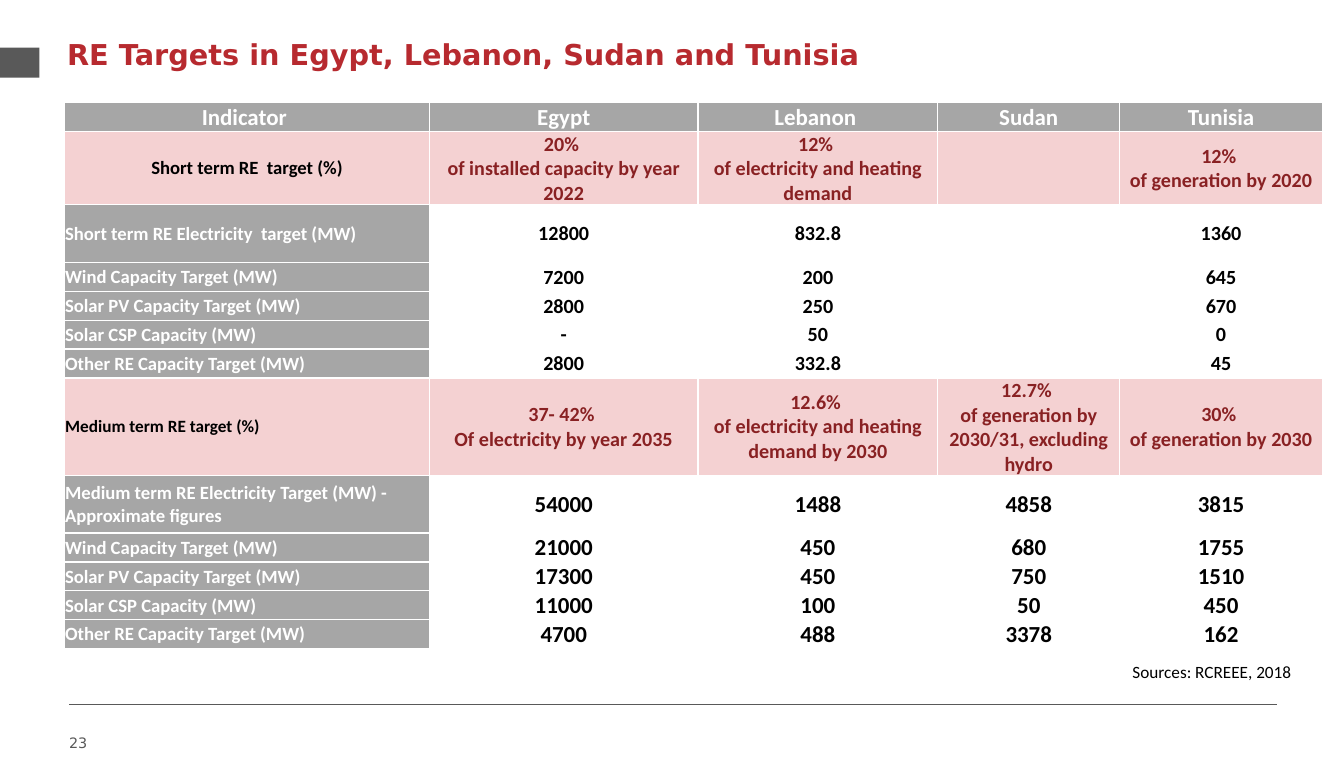
from dataclasses import dataclass

from lxml.etree import SubElement
from pptx import Presentation
from pptx.dml.color import RGBColor
from pptx.enum.shapes import MSO_CONNECTOR, MSO_SHAPE
from pptx.enum.text import MSO_ANCHOR, PP_ALIGN
from pptx.oxml.ns import qn
from pptx.slide import Slide
from pptx.table import _Cell
from pptx.text.text import TextFrame
from pptx.util import Cm, Pt


@dataclass(frozen=True)
class Theme:
    body_font: str = "Calibri"
    title_font: str = "DejaVu Sans"
    white: str = "FFFFFF"
    black: str = "000000"
    dark_gray: str = "595959"
    label_gray: str = "A6A6A6"
    pink: str = "F4D1D2"
    red: str = "B72A2F"
    dark_red: str = "892123"
    title_size: int = 20
    heading_size: int = 16
    value_size: int = 14
    label_size: int = 13
    small_size: int = 12
    number_size: int = 10


THEME = Theme()


@dataclass(frozen=True)
class Style:
    size: int
    color: str
    fill: str | None = None
    bold: bool = True
    font: str = THEME.body_font
    align: PP_ALIGN = PP_ALIGN.CENTER
    anchor: MSO_ANCHOR = MSO_ANCHOR.MIDDLE


@dataclass(frozen=True)
class Row:
    height: float
    label: Style
    value: Style
    texts: tuple[str, ...]


@dataclass(frozen=True)
class Label:
    left: float
    top: float
    width: float
    height: float
    side_margin: float
    text: str
    style: Style


HEADING = Style(THEME.heading_size, THEME.white, THEME.label_gray, anchor=MSO_ANCHOR.BOTTOM)
SHORT_LABEL = Style(THEME.label_size, THEME.black, THEME.pink)
MEDIUM_LABEL = Style(THEME.small_size, THEME.black, THEME.pink, align=PP_ALIGN.LEFT)
SHARE = Style(THEME.value_size, THEME.dark_red, THEME.pink)
CAPACITY_LABEL = Style(THEME.label_size, THEME.white, THEME.label_gray, align=PP_ALIGN.LEFT)
SHORT_VALUE = Style(THEME.value_size, THEME.black)
MEDIUM_VALUE = Style(THEME.heading_size, THEME.black)

SINGLE, DOUBLE, SHARE_HEIGHT = 0.71, 1.42, 1.35
COLUMN_WIDTHS = (8.97, 6.6, 5.89, 4.47, 4.98)
SOURCES = ("Wind Capacity Target (MW)", "Solar PV Capacity Target (MW)",
           "Solar CSP Capacity (MW)", "Other RE Capacity Target (MW)")
SHORT_CAPACITIES = (("7200", "200", "", "645"), ("2800", "250", "", "670"),
                    ("-", "50", "", "0"), ("2800", "332.8", "", "45"))
MEDIUM_CAPACITIES = (("21000", "450", "680", "1755"), ("17300", "450", "750", "1510"),
                     ("11000", "100", "50", "450"), ("4700", "488", "3378", "162"))


def capacity_rows(capacities: tuple[tuple[str, ...], ...], value: Style) -> list[Row]:
    return [Row(SINGLE, CAPACITY_LABEL, value, (source, *values))
            for source, values in zip(SOURCES, capacities)]


ROWS = [
    Row(SINGLE, HEADING, HEADING, ("Indicator ", "Egypt", "Lebanon ", "Sudan", "Tunisia")),
    Row(DOUBLE, SHORT_LABEL, SHARE, (
        "Short term RE  target (%)",
        "20% \nof installed capacity by year 2022",
        "12% \nof electricity and heating demand",
        "",
        "12% \nof generation by 2020")),
    Row(DOUBLE, CAPACITY_LABEL, SHORT_VALUE, (
        "Short term RE Electricity  target (MW)", "12800", "832.8", "", "1360")),
    *capacity_rows(SHORT_CAPACITIES, SHORT_VALUE),
    Row(SHARE_HEIGHT, MEDIUM_LABEL, SHARE, (
        "Medium term RE target (%)",
        "37- 42% \nOf electricity by year 2035",
        "12.6% \nof electricity and heating demand by 2030",
        "12.7% \nof generation by 2030/31, excluding hydro",
        "30% \nof generation by 2030")),
    Row(DOUBLE, CAPACITY_LABEL, MEDIUM_VALUE, (
        "Medium term RE Electricity Target (MW) - Approximate figures",
        "54000", "1488", "4858", "3815")),
    *capacity_rows(MEDIUM_CAPACITIES, MEDIUM_VALUE),
]

LABELS = (
    Label(1.65, 0.79, 29.72, 2.46, 0, "RE Targets in Egypt, Lebanon, Sudan and Tunisia",
          Style(THEME.title_size, THEME.red, font=THEME.title_font,
                align=PP_ALIGN.LEFT, anchor=MSO_ANCHOR.TOP)),
    Label(13.59, 16.13, 18.39, 1.27, 0.25, "Sources: RCREEE, 2018",
          Style(THEME.small_size, THEME.black, bold=False,
                align=PP_ALIGN.RIGHT, anchor=MSO_ANCHOR.TOP)),
    Label(1.7, 17.91, 7.7, 1.32, 0, "23",
          Style(THEME.number_size, THEME.dark_gray, bold=False, font=THEME.title_font,
                align=PP_ALIGN.LEFT, anchor=MSO_ANCHOR.TOP)),
)


def write_text(frame: TextFrame, text: str, style: Style) -> None:
    frame.text = text
    for paragraph in frame.paragraphs:
        paragraph.alignment = style.align
        for span in paragraph.runs:
            span.font.name = style.font
            span.font.size = Pt(style.size)
            span.font.bold = style.bold
            span.font.color.rgb = RGBColor.from_string(style.color)
        if not paragraph.runs:
            SubElement(paragraph._p, qn("a:endParaRPr"), sz=str(style.size * 100))


def add_label(page: Slide, label: Label) -> None:
    box = page.shapes.add_textbox(Cm(label.left), Cm(label.top), Cm(label.width), Cm(label.height))
    frame = box.text_frame
    frame.word_wrap = True
    frame.margin_left = frame.margin_right = Cm(label.side_margin)
    frame.vertical_anchor = label.style.anchor
    write_text(frame, label.text, label.style)


def add_borders(cell: _Cell) -> None:
    properties = cell._tc.get_or_add_tcPr()
    for position, side in enumerate(("lnL", "lnR", "lnT", "lnB")):
        line = properties.makeelement(qn(f"a:{side}"), {"w": str(Pt(1))})
        fill = SubElement(line, qn("a:solidFill"))
        SubElement(fill, qn("a:srgbClr"), val=THEME.white)
        properties.insert(position, line)


def style_cell(cell: _Cell, text: str, style: Style) -> None:
    cell.margin_left = cell.margin_right = cell.margin_top = Cm(0.02)
    cell.margin_bottom = 0
    cell.vertical_anchor = style.anchor
    if style.fill:
        cell.fill.solid()
        cell.fill.fore_color.rgb = RGBColor.from_string(style.fill)
    else:
        cell.fill.background()
    add_borders(cell)
    write_text(cell.text_frame, text, style)


def add_targets(page: Slide) -> None:
    table = page.shapes.add_table(
        len(ROWS), len(COLUMN_WIDTHS), Cm(1.58), Cm(2.52),
        Cm(sum(COLUMN_WIDTHS)), Cm(sum(row.height for row in ROWS))).table
    table.first_row = table.horz_banding = False
    for column, width in zip(table.columns, COLUMN_WIDTHS):
        column.width = Cm(width)
    for table_row, row in zip(table.rows, ROWS):
        table_row.height = Cm(row.height)
        for index, (cell, text) in enumerate(zip(table_row.cells, row.texts)):
            style_cell(cell, text, row.value if index else row.label)


def add_decoration(page: Slide) -> None:
    gray = RGBColor.from_string(THEME.dark_gray)
    marker = page.shapes.add_shape(MSO_SHAPE.RECTANGLE, 0, Cm(1.17), Cm(0.97), Cm(0.74))
    marker.shadow.inherit = False
    marker.fill.solid()
    marker.fill.fore_color.rgb = gray
    marker.line.fill.background()
    rule = page.shapes.add_connector(MSO_CONNECTOR.STRAIGHT, Cm(1.7), Cm(17.31), Cm(31.37), Cm(17.31))
    rule.line.color.rgb = gray
    rule.line.width = Pt(0.75)
    SubElement(rule._element.spPr, qn("a:effectLst"))


def main() -> None:
    deck = Presentation()
    deck.slide_width, deck.slide_height = Cm(33.02), Cm(19.05)
    page = deck.slides.add_slide(deck.slide_layouts[6])
    add_decoration(page)
    for label in LABELS:
        add_label(page, label)
    add_targets(page)
    deck.save("out.pptx")


if __name__ == "__main__":
    main()
